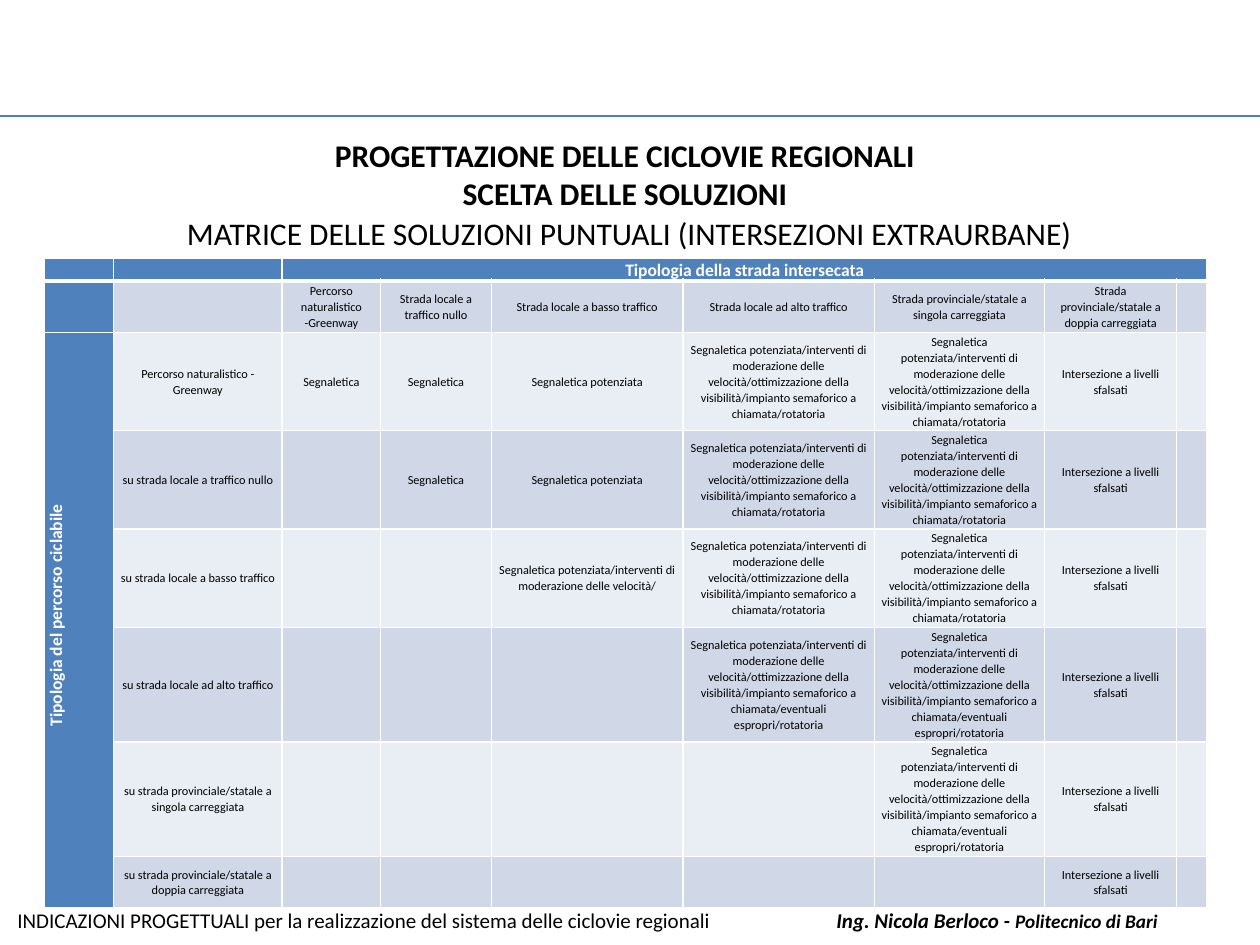
"""Build the slide with the matrix of solutions for rural cycle route crossings."""
from lxml.etree import SubElement
from pptx import Presentation
from pptx.dml.color import RGBColor
from pptx.enum.shapes import MSO_CONNECTOR
from pptx.enum.text import MSO_ANCHOR, PP_ALIGN
from pptx.oxml.ns import qn
from pptx.util import Inches, Pt

BLUE, DARK, LIGHT = "4F81BD", "D0D8E8", "E9EDF4"
BLACK, WHITE = "000000", "FFFFFF"

SIGN = "Segnaletica"
PLUS = SIGN + " potenziata"
SLOW = PLUS + "/interventi di moderazione delle velocità/"
LIGHTS = SLOW + "ottimizzazione della visibilità/impianto semaforico a chiamata/"
ROUND = LIGHTS + "rotatoria"
LAND = LIGHTS + "eventuali espropri/rotatoria"
SPLIT = "Intersezione a livelli sfalsati"

TOP = "Tipologia della strada intersecata"
SIDE = "Tipologia del percorso ciclabile"
ROWS = [
    ["", "", TOP, "", "", "", "", "", ""],
    ["", "", "Percorso naturalistico -Greenway", "Strada locale a traffico nullo",
     "Strada locale a basso traffico", "Strada locale ad alto traffico",
     "Strada provinciale/statale a singola carreggiata",
     "Strada provinciale/statale a doppia carreggiata", ""],
    [SIDE, "Percorso naturalistico - Greenway", SIGN, SIGN, PLUS, ROUND, ROUND, SPLIT, ""],
    ["", "su strada locale a traffico nullo", "", SIGN, PLUS, ROUND, ROUND, SPLIT, ""],
    ["", "su strada locale a basso traffico", "", "", SLOW, ROUND, ROUND, SPLIT, ""],
    ["", "su strada locale ad alto traffico", "", "", "", LAND, LAND, SPLIT, ""],
    ["", "su strada provinciale/statale a singola carreggiata", "", "", "", "", LAND, SPLIT, ""],
    ["", "su strada provinciale/statale a doppia carreggiata", "", "", "", "", "", SPLIT, ""],
]
WIDTHS = [0.55, 1.34, 0.78, 0.88, 1.52, 1.52, 1.35, 1.05, 0.24]
HEIGHTS = [0.17, 0.41, 0.78, 0.78, 0.78, 0.91, 0.91, 0.41]

HEAD = {"size": Pt(18), "bold": True}
PLAIN = {"size": Pt(18)}
FOOT = {"size": Pt(12)}
NAME = {"size": Pt(12), "bold": True, "italic": True}
SCHOOL = {**NAME, "size": Pt(11)}
LABEL = {"size": Pt(10), "bold": True}
BODY = {"size": Pt(7), "bold": False}
MID, LEFT = PP_ALIGN.CENTER, PP_ALIGN.LEFT

BOXES = [
    ((0.04, 1.03, 9.84, 0.71), MID, [[("PROGETTAZIONE DELLE CICLOVIE REGIONALI", HEAD)],
                                     [("SCELTA DELLE SOLUZIONI", HEAD)]]),
    ((0.39, 1.65, 9.21, 0.4), MID,
     [[("MATRICE DELLE SOLUZIONI PUNTUALI (INTERSEZIONI EXTRAURBANE)", PLAIN)]]),
    ((0.04, 7.15, 9.84, 0.3), LEFT,
     [[("INDICAZIONI PROGETTUALI per la realizzazione del sistema delle ciclovie regionali\t\t",
        FOOT), ("Ing. Nicola Berloco - ", NAME), ("Politecnico di Bari", SCHOOL)]]),
]
CELL = {"margin_left": Inches(0.03), "margin_right": Inches(0.03), "margin_top": 0,
        "margin_bottom": 0, "vertical_anchor": MSO_ANCHOR.MIDDLE}
PARA = {"alignment": MID, "line_spacing": 1.07, "space_after": Pt(8)}


def put(item, values):
    """Set each attribute in values on item."""
    for key, value in values.items():
        setattr(item, key, value)


def tint(color, code):
    """Set a colour from a hex string."""
    color.rgb = RGBColor.from_string(code)


def write(para, text, form, code=BLACK):
    """Add one run of formatted text to a paragraph."""
    run = para.add_run()
    run.text = text
    put(run.font, {"name": "Calibri", **form})
    tint(run.font.color, code)


def edge(cell, row):
    """Draw white borders, thick between the first two rows."""
    props = cell._tc.get_or_add_tcPr()
    for side in ("L", "R", "T", "B"):
        thick = (row, side) in ((0, "B"), (1, "T"))
        line = SubElement(props, qn(f"a:ln{side}"), w=str(Pt(3 if thick else 1)))
        fill = SubElement(line, qn("a:solidFill"))
        SubElement(fill, qn("a:srgbClr"), val=WHITE)


def style(cell, row, col, text):
    """Fill, border and label one cell of the matrix."""
    blue = row == 0 or col == 0
    edge(cell, row)
    put(cell, CELL)
    cell.fill.solid()
    tint(cell.fill.fore_color, BLUE if blue else DARK if row % 2 else LIGHT)
    para = cell.text_frame.paragraphs[0]
    put(para, PARA)
    if text:
        write(para, text, LABEL if blue else BODY, WHITE if blue else BLACK)
    else:
        SubElement(para._p, qn("a:endParaRPr"), sz="700")
    if text == SIDE:
        cell._tc.get_or_add_tcPr().set("vert", "vert270")
        para._p.get_or_add_pPr().set("marL", str(Inches(0.08)))


def main():
    """Assemble and save the slide."""
    deck = Presentation()
    put(deck, {"slide_width": Inches(10), "slide_height": Inches(7.5)})
    shapes = deck.slides.add_slide(deck.slide_layouts[6]).shapes

    rule = shapes.add_connector(MSO_CONNECTOR.STRAIGHT, 0, Inches(0.92), Inches(10), Inches(0.92))
    rule.line.width = Pt(1.5)
    tint(rule.line.color, "4B7EBC")
    SubElement(rule._element.spPr, qn("a:effectLst"))

    for place, align, lines in BOXES:
        frame = shapes.add_textbox(*map(Inches, place)).text_frame
        frame.word_wrap = True
        for num, runs in enumerate(lines):
            para = frame.add_paragraph() if num else frame.paragraphs[0]
            para.alignment = align
            for text, form in runs:
                write(para, text, form)

    size = map(Inches, (0.35, 2.05, sum(WIDTHS), sum(HEIGHTS)))
    grid = shapes.add_table(len(HEIGHTS), len(WIDTHS), *size).table
    for col, width in zip(grid.columns, WIDTHS):
        col.width = Inches(width)
    for row, height in zip(grid.rows, HEIGHTS):
        row.height = Inches(height)
    for row, texts in enumerate(ROWS):
        for col, text in enumerate(texts):
            style(grid.cell(row, col), row, col, text)
    grid.cell(0, 2).merge(grid.cell(0, 8))
    grid.cell(2, 0).merge(grid.cell(7, 0))
    deck.save("out.pptx")


if __name__ == "__main__":
    main()
